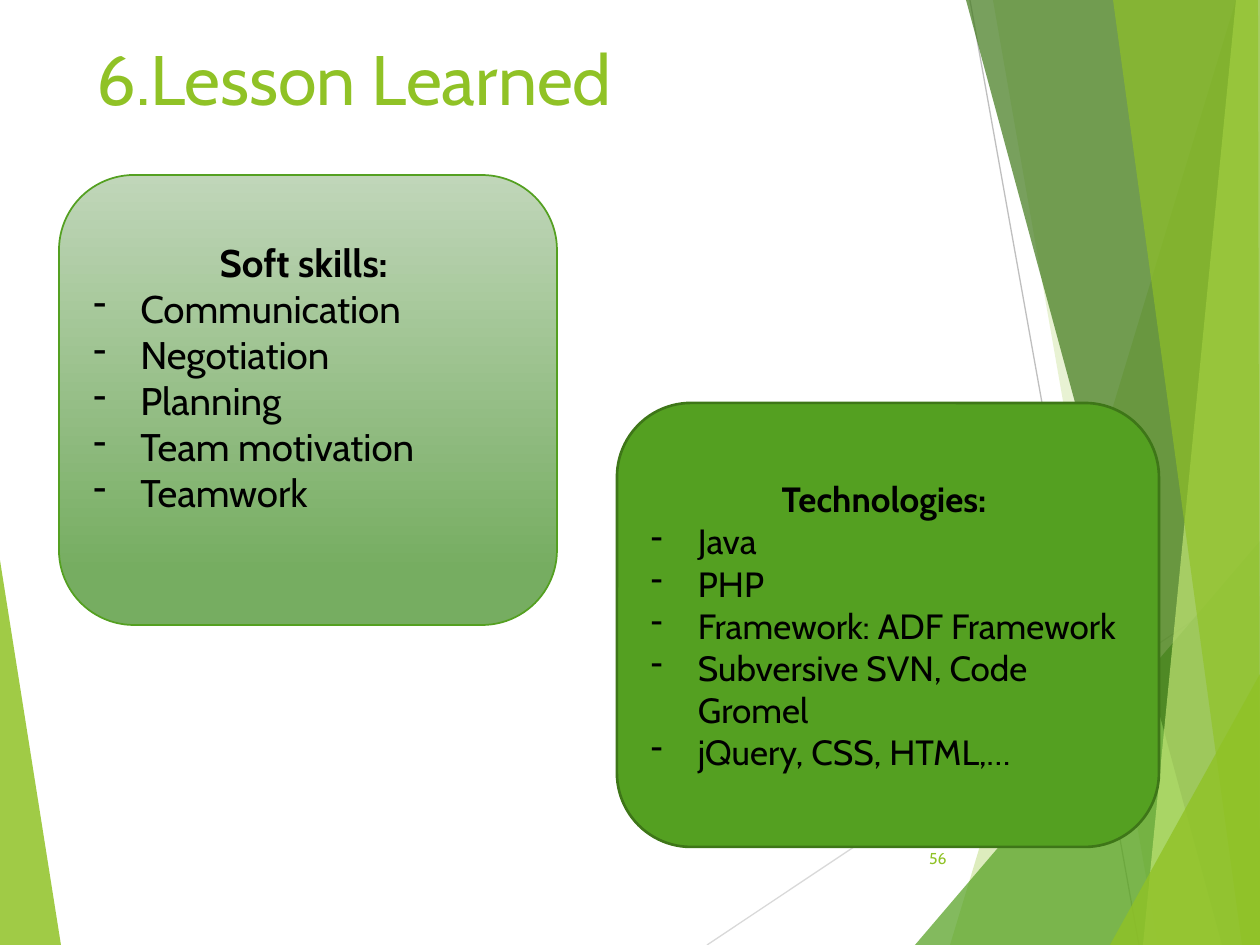
from pptx import Presentation
from pptx import util as u
from pptx.dml.color import RGBColor
from pptx.enum import shapes, text
from pptx.oxml import ns
from lxml import etree

PX = 914400 / 126
WIDE, HIGH = 1260, 945
FONT = "Cabin"
LIME = RGBColor(0x90, 0xC2, 0x26)
GREEN = RGBColor(0x54, 0xA0, 0x21)
MOSS = RGBColor(0x3F, 0x78, 0x19)
EDGE = RGBColor(0x3E, 0x76, 0x18)
PALE = RGBColor(0xC0, 0xE4, 0x74)
MIST = RGBColor(0xC0, 0xD6, 0xB9)
SAGE = RGBColor(0x76, 0xAD, 0x61)
BLACK = RGBColor(0, 0, 0)
SILVER = RGBColor(0xD9, 0xD9, 0xD9)
GRAY = RGBColor(0xBF, 0xBF, 0xBF)

TITLE = "6.Lesson Learned"
NUMBER = "56"
LEFT = ([(0, 560), (61, HIGH), (0, HIGH)], LIME, 85)
RAYS = [
    ((707, HIGH), (WIDE, 576), SILVER),
    ((970, 0), (1139, HIGH), GRAY),
]
END, TOP = (WIDE, HIGH), (WIDE, 0)
FACETS = [
    ([(1236, 0), (950, HIGH), END, TOP], LIME, 30),
    ([(993, 0), (1158, HIGH), END, TOP], LIME, 20),
    ([(915, HIGH), (WIDE, 541), END], GREEN, 72),
    ([(966, 0), (1222, HIGH), END, TOP], MOSS, 70),
    ([(1236, 0), (1143, HIGH), END, TOP], PALE, 70),
    ([(1113, 0), (1242, HIGH), END, (1258, 0)], LIME, 65),
    ([(1110, HIGH), (WIDE, 674), END], LIME, 80),
]
CARDS = [
    dict(box=(59, 175, 498, 450), fill=[(0, MIST), (0.88, SAGE)],
         edge=GREEN, width=1, size=22, foot=52, head="Soft skills: ",
         items=["Communication", "Negotiation", "Planning",
                "Team motivation", "Teamwork"]),
    dict(box=(617, 403, 542, 444), fill=GREEN,
         edge=EDGE, width=1.5, size=20, foot=6, head="Technologies: ",
         items=["Java", "PHP", "Framework: ADF Framework",
                "Subversive SVN, Code Gromel", "jQuery, CSS, HTML,…"]),
]


def emu(*vals):
    return [round(v * PX) for v in vals]


def style(item, **vals):
    for key, val in vals.items():
        setattr(item, key, val)


def ink(par, size, color, bold=False):
    style(par.font, name=FONT, size=u.Pt(size), bold=bold)
    par.font.color.rgb = color


def facet(page, points, color, alpha):
    build = page.shapes.build_freeform(*points[0], scale=PX)
    build.add_line_segments(points[1:], close=True)
    shape = build.convert_to_shape()
    shape.shadow.inherit = False
    shape.fill.solid()
    shape.fill.fore_color.rgb = color
    shape.line.fill.background()
    tone = shape._element.spPr.find(".//" + ns.qn("a:srgbClr"))
    etree.SubElement(tone, ns.qn("a:alpha"), val=str(alpha * 1000))


def ray(page, start, end, color):
    line = page.shapes.add_connector(
        shapes.MSO_CONNECTOR.STRAIGHT, *emu(*start, *end))
    line.line.color.rgb = color
    line.line.width = u.Pt(0.75)
    etree.SubElement(line._element.spPr, ns.qn("a:effectLst"))


def dash(par):
    props = par._p.get_or_add_pPr()
    gap = emu(47)[0]
    props.set("marL", str(gap))
    props.set("indent", str(-gap))
    etree.SubElement(props, ns.qn("a:buChar"), char="-")


def card(page, box, fill, edge, width, size, foot, head, items):
    shape = page.shapes.add_shape(
        shapes.MSO_SHAPE.ROUNDED_RECTANGLE, *emu(*box))
    shape.shadow.inherit = False
    if isinstance(fill, list):
        shape.fill.gradient()
        shape.fill.gradient_angle = 270
        for stop, (pos, color) in zip(shape.fill.gradient_stops, fill):
            stop.position = pos
            stop.color.rgb = color
    else:
        shape.fill.solid()
        shape.fill.fore_color.rgb = fill
    shape.line.color.rgb = edge
    shape.line.width = u.Pt(width)
    frame = shape.text_frame
    style(frame, word_wrap=True, vertical_anchor=text.MSO_ANCHOR.MIDDLE,
          margin_bottom=emu(foot)[0])
    par = frame.paragraphs[0]
    style(par, text=head, alignment=text.PP_ALIGN.CENTER)
    ink(par, size, BLACK, True)
    for item in items:
        par = frame.add_paragraph()
        style(par, text=item, alignment=text.PP_ALIGN.LEFT)
        dash(par)
        ink(par, size, BLACK)


def label(shape, box, words, size, side, anchor):
    style(shape, **dict(zip(("left", "top", "width", "height"), emu(*box))))
    frame = shape.text_frame
    style(frame, word_wrap=True, auto_size=text.MSO_AUTO_SIZE.NONE,
          vertical_anchor=anchor)
    par = frame.paragraphs[0]
    style(par, text=words, alignment=side)
    ink(par, size, LIME)


def main():
    deck = Presentation()
    deck.slide_width, deck.slide_height = emu(WIDE, HIGH)
    page = deck.slides.add_slide(deck.slide_layouts.get_by_name("Title Only"))
    facet(page, *LEFT)
    for item in RAYS:
        ray(page, *item)
    for item in FACETS:
        facet(page, *item)
    label(page.shapes.title, (84, -126, 874, 252), TITLE, 40,
          text.PP_ALIGN.LEFT, text.MSO_ANCHOR.BOTTOM)
    label(page.shapes.add_textbox(0, 0, 0, 0), (888, 833, 71, 50), NUMBER, 9,
          text.PP_ALIGN.RIGHT, text.MSO_ANCHOR.MIDDLE)
    for item in CARDS:
        card(page, **item)
    deck.save("out.pptx")


if __name__ == "__main__":
    main()
